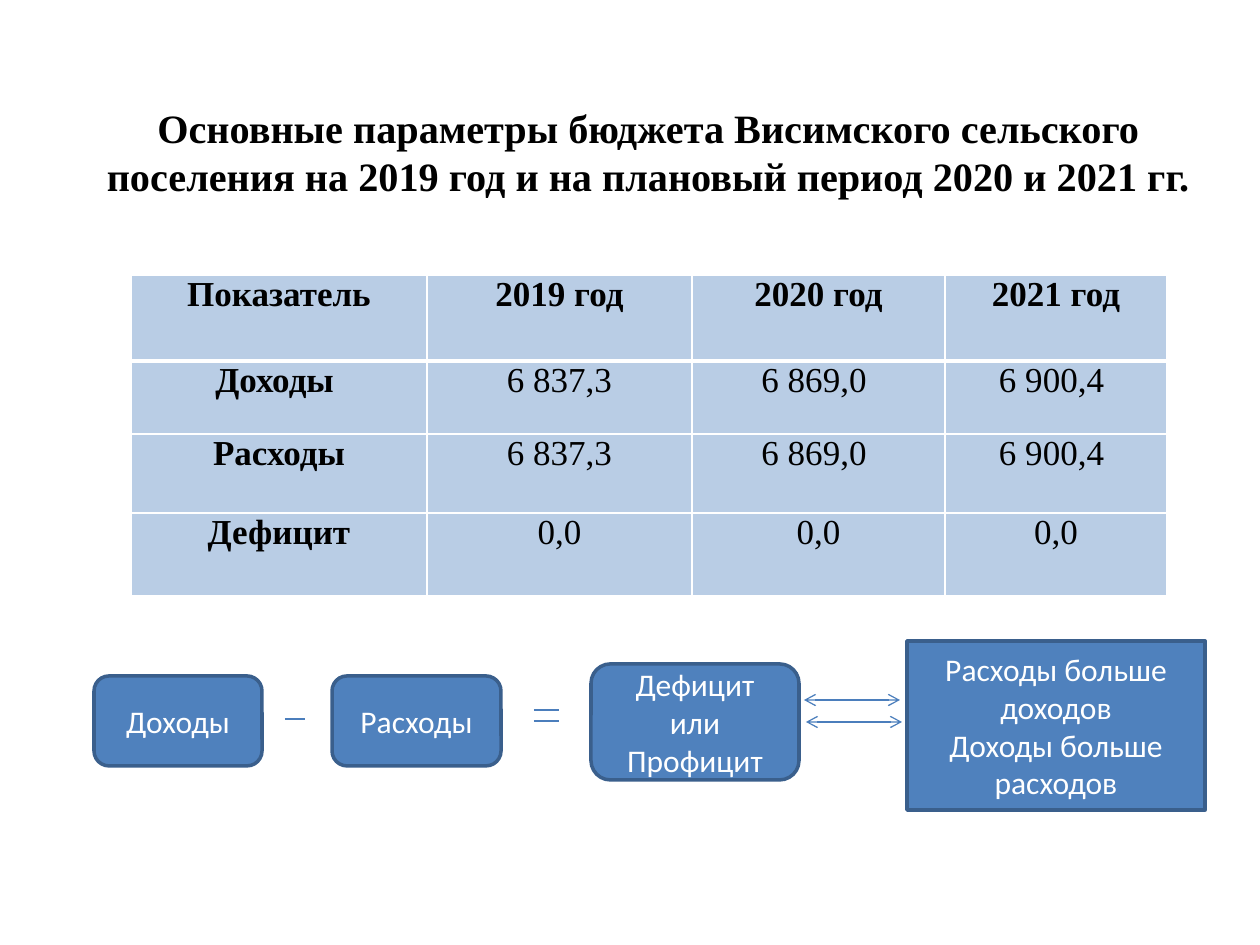
from dataclasses import dataclass

from lxml import etree
from pptx import Presentation
from pptx import util as u
from pptx.dml.color import RGBColor
from pptx.enum import shapes, text
from pptx.oxml.ns import qn


@dataclass(frozen=True)
class Theme:
    """Colours, fonts and type sizes of the slide."""
    ink: str = "000000"
    paper: str = "FFFFFF"
    cell: str = "B9CDE5"
    block: str = "4F81BD"
    edge: str = "3A5F8C"
    stroke: str = "4B7EBC"
    serif: str = "Times New Roman"
    sans: str = "Calibri"
    title: int = 23
    table: int = 20
    label: int = 18


THEME = Theme()
COLUMNS = (296, 265, 253, 222)
ROWS = (86, 73, 79, 83)
BUDGET = (
    ("Показатель", "2019 год", "2020 год", "2021 год"),
    ("Доходы ", "6 837,3", "6 869,0 ", "6 900,4 "),
    ("Расходы", "6 837,3", "6 869,0 ", "6 900,4 "),
    ("Дефицит", "0,0", "0,0", "0,0"),
)
ROUND = shapes.MSO_SHAPE.ROUNDED_RECTANGLE
BLOCKS = (
    (ROUND, (94, 676, 168, 90), ("Доходы",)),
    (ROUND, (332, 676, 169, 90), ("Расходы",)),
    (ROUND, (591, 664, 208, 116), ("Дефицит или Профицит",)),
    (shapes.MSO_SHAPE.RECTANGLE, (907, 641, 298, 169),
     ("Расходы больше доходов", "Доходы больше расходов")),
)
SIGNS = ((285, 305, 719), (534, 559, 710), (534, 559, 721))
ARROWS = ((804, 900, 700), (806, 902, 722))


def px(length):
    """Turn pixels at 126 to the inch into EMU."""
    return u.Emu(round(length * 914400 / 126))


def rgb(value):
    """Return a colour object for a hex value."""
    return RGBColor.from_string(value)


def write(frame, *lines, size, font, color, bold=False):
    """Fill a text frame with centred paragraphs in one format."""
    frame.word_wrap = True
    for index, line in enumerate(lines):
        para = frame.add_paragraph() if index else frame.paragraphs[0]
        para.alignment = text.PP_ALIGN.CENTER
        span = para.add_run()
        span.text = line
        span.font.size = u.Pt(size)
        span.font.name = font
        span.font.bold = bold
        span.font.color.rgb = rgb(color)


def add_title(page, line):
    """Place and format the title placeholder."""
    title = page.shapes.title
    title.left, title.top, title.width, title.height = map(px, (74, 96, 1150, 111))
    frame = title.text_frame
    frame.auto_size = text.MSO_AUTO_SIZE.NONE
    frame.vertical_anchor = text.MSO_ANCHOR.MIDDLE
    write(frame, line, size=THEME.title, font=THEME.serif, color=THEME.ink, bold=True)


def add_border(cell, side, points):
    """Draw one border of a table cell."""
    line = etree.SubElement(cell._tc.get_or_add_tcPr(), qn(f"a:ln{side}"), w=str(u.Pt(points)))
    fill = etree.SubElement(line, qn("a:solidFill"))
    etree.SubElement(fill, qn("a:srgbClr"), val=THEME.paper)


def format_cell(cell, value, row, column):
    """Write, border and fill one cell of the budget table."""
    cell.margin_left = cell.margin_right = px(9)
    cell.margin_top = cell.margin_bottom = 0
    for side in "LRTB":
        thick = (row, side) in ((0, "B"), (1, "T"))
        add_border(cell, side, 3 if thick else 1)
    cell.fill.solid()
    cell.fill.fore_color.rgb = rgb(THEME.cell)
    write(cell.text_frame, value, size=THEME.table, font=THEME.serif,
          color=THEME.ink, bold=row == 0 or column == 0)


def add_budget(page):
    """Add the budget table."""
    place = map(px, (131, 275, sum(COLUMNS), sum(ROWS)))
    table = page.shapes.add_table(len(ROWS), len(COLUMNS), *place).table
    for column, width in zip(table.columns, COLUMNS):
        column.width = px(width)
    for row, height in zip(table.rows, ROWS):
        row.height = px(height)
    for row, values in enumerate(BUDGET):
        for column, value in enumerate(values):
            format_cell(table.cell(row, column), value, row, column)


def add_block(page, kind, place, lines):
    """Add one labelled block of the formula."""
    box = page.shapes.add_shape(kind, *map(px, place))
    box.shadow.inherit = False
    box.fill.solid()
    box.fill.fore_color.rgb = rgb(THEME.block)
    box.line.color.rgb = rgb(THEME.edge)
    box.line.width = u.Pt(2)
    box.text_frame.vertical_anchor = text.MSO_ANCHOR.MIDDLE
    write(box.text_frame, *lines, size=THEME.label, font=THEME.sans, color=THEME.paper)


def add_line(page, start, end, y, arrows=False):
    """Add a level line, with arrowheads at both ends if asked."""
    line = page.shapes.add_connector(
        shapes.MSO_CONNECTOR.STRAIGHT, px(start), px(y), px(end), px(y))
    line.line.color.rgb = rgb(THEME.stroke)
    line.line.width = u.Pt(0.75)
    properties = line._element.spPr
    if arrows:
        for tip in ("a:headEnd", "a:tailEnd"):
            etree.SubElement(properties.find(qn("a:ln")), qn(tip), type="arrow")
    etree.SubElement(properties, qn("a:effectLst"))


def main():
    """Build and save the slide."""
    deck = Presentation()
    deck.slide_width, deck.slide_height = px(1260), px(945)
    page = deck.slides.add_slide(deck.slide_layouts.get_by_name("Title Only"))
    add_title(page, "Основные параметры бюджета Висимского сельского поселения "
                    "на 2019 год и на плановый период 2020 и 2021 гг.")
    add_budget(page)
    for block in BLOCKS:
        add_block(page, *block)
    for sign in SIGNS:
        add_line(page, *sign)
    for arrow in ARROWS:
        add_line(page, *arrow, arrows=True)
    deck.save("out.pptx")


if __name__ == "__main__":
    main()
